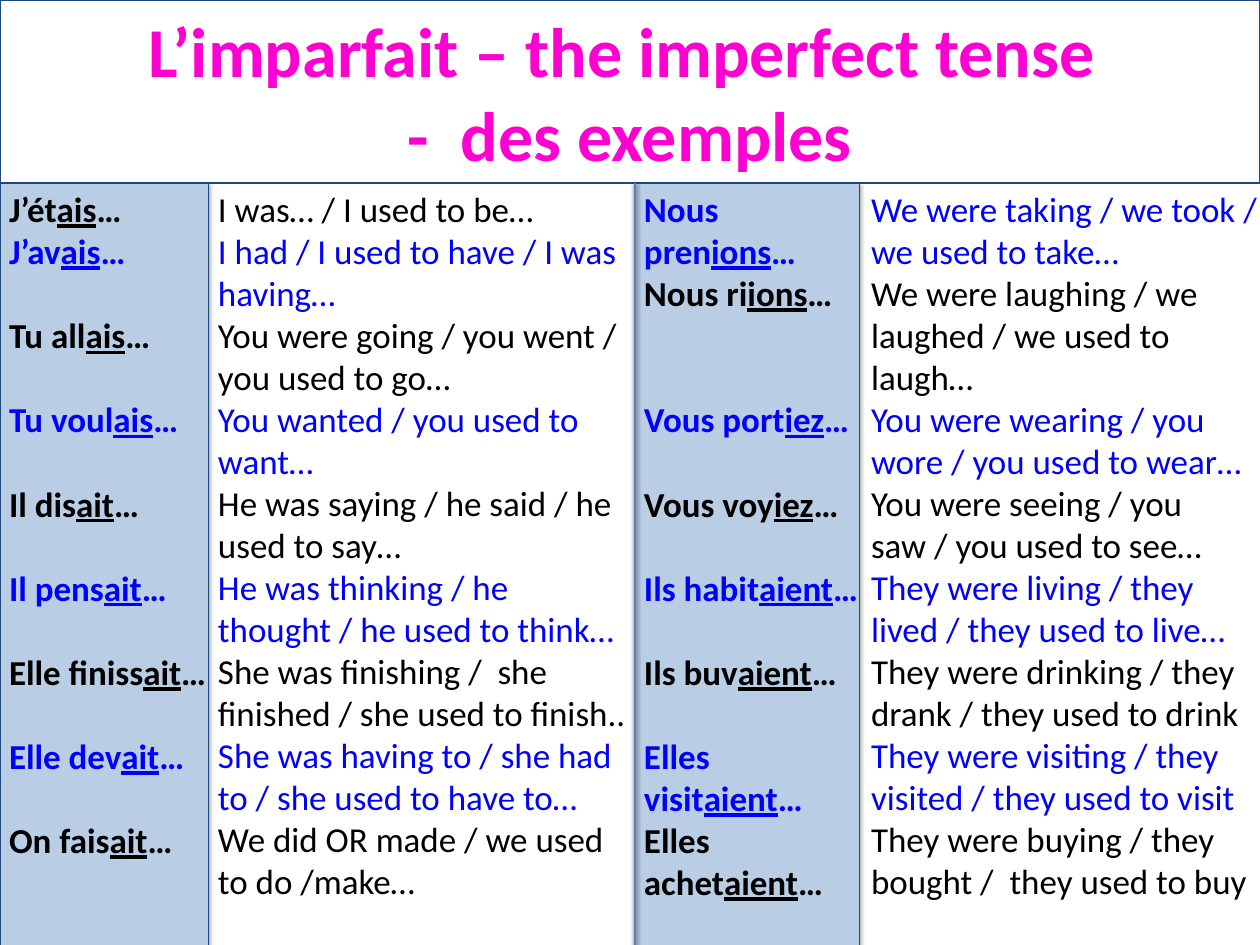
from dataclasses import dataclass

from lxml.etree import SubElement
from pptx import Presentation
from pptx.dml.color import RGBColor
from pptx.enum.shapes import MSO_CONNECTOR, MSO_SHAPE
from pptx.enum.text import MSO_ANCHOR, MSO_AUTO_SIZE, PP_ALIGN
from pptx.oxml.ns import qn
from pptx.util import Pt

SCALE = 10160
COLOURS = {
    "black": "000000",
    "blue": "0000FF",
    "title": "FF00D3",
    "panel": "B9CDE5",
    "border": "1F497D",
    "divider": "4F81BD",
}
FONT = "Calibri"
LINE_POINTS = 33.7
SLIDE_WIDTH, SLIDE_HEIGHT, HEADER_HEIGHT = 1260, 945, 183


@dataclass(frozen=True)
class Entry:
    stem: str
    ending: str = ""
    close: str = ""
    gap: int = 0


@dataclass(frozen=True)
class Column:
    left: int
    width: int
    height: int
    colours: tuple[str, str]
    bold: bool
    entries: list[Entry]


def verb(stem: str, ending: str, gap: int = 1) -> Entry:
    return Entry(stem, ending, "…", gap)


BLACK_FIRST = ("black", "blue")
BLUE_FIRST = ("blue", "black")
COLUMNS = [
    Column(0, 237, 772, BLACK_FIRST, True, [
        verb("J’ét", "ais", 0),
        verb("J’av", "ais"),
        verb("Tu all", "ais"),
        verb("Tu voul", "ais"),
        verb("Il dis", "ait"),
        verb("Il pens", "ait"),
        verb("Elle finiss", "ait"),
        verb("Elle dev", "ait"),
        verb("On fais", "ait", 0),
    ]),
    Column(209, 426, 815, BLACK_FIRST, False, [
        Entry("I was… / I used to be…"),
        Entry("I had / I used to have / I was having…"),
        Entry("You were going / you went / you used to go…"),
        Entry("You wanted / you used to want…"),
        Entry("He was saying / he said / he used to say…"),
        Entry("He was thinking / he thought / he used to think…"),
        Entry("She was finishing /  she finished / she used to finish.."),
        Entry("She was having to / she had to / she used to have to…"),
        Entry("We did OR made / we used to do /make…"),
    ]),
    Column(635, 241, 772, BLUE_FIRST, True, [
        verb("Nous pren", "ions", 0),
        verb("Nous ri", "ions", 2),
        verb("Vous port", "iez"),
        verb("Vous voy", "iez"),
        verb("Ils habit", "aient"),
        verb("Ils buv", "aient"),
        verb("Elles visit", "aient", 0),
        verb("Elles achet", "aient", 0),
    ]),
    Column(862, 406, 772, BLUE_FIRST, False, [
        Entry("We were taking / we took / we used to take…"),
        Entry("We were laughing / we laughed / we used to laugh…"),
        Entry("You were wearing / you wore / you used to wear…"),
        Entry("You were seeing / you saw / you used to see…"),
        Entry("They were living / they lived / they used to live…"),
        Entry("They were drinking / they drank / they used to drink"),
        Entry("They were visiting / they visited / they used to visit"),
        Entry("They were buying / they bought /  they used to buy"),
    ]),
]


def px(length: int) -> int:
    return length * SCALE


def rgb(name: str) -> RGBColor:
    return RGBColor.from_string(COLOURS[name])


def place(shape, left: int, top: int, width: int, height: int) -> None:
    shape.left, shape.top = px(left), px(top)
    shape.width, shape.height = px(width), px(height)


def set_line(shape, colour: str, points: float) -> None:
    shape.line.color.rgb = rgb(colour)
    shape.line.width = Pt(points)


def add_shadow(shape, distance: float, opacity: int) -> None:
    effects = SubElement(shape.element.spPr, qn("a:effectLst"))
    shadow = SubElement(effects, qn("a:outerShdw"), blurRad=str(Pt(3.1)),
                        dist=str(Pt(distance)), dir="5400000", rotWithShape="0")
    colour = SubElement(shadow, qn("a:srgbClr"), val=COLOURS["black"])
    SubElement(colour, qn("a:alpha"), val=str(opacity * 1000))


def set_font(paragraph, size: int, colour: str, bold: bool) -> None:
    for font in (paragraph.font, *(run.font for run in paragraph.runs)):
        font.name, font.size, font.bold = FONT, Pt(size), bold
        font.color.rgb = rgb(colour)


def add_panel(slide, left: int, width: int) -> None:
    panel = slide.shapes.add_shape(MSO_SHAPE.RECTANGLE, px(left), px(HEADER_HEIGHT),
                                   px(width), px(SLIDE_HEIGHT - HEADER_HEIGHT))
    panel.fill.solid()
    panel.fill.fore_color.rgb = rgb("panel")
    set_line(panel, "border", 0.75)
    add_shadow(panel, 1.8, 35)
    slide.shapes.title.element.addprevious(panel.element)


def fill_title(title) -> None:
    place(title, 0, 0, SLIDE_WIDTH, HEADER_HEIGHT)
    set_line(title, "border", 1)
    frame = title.text_frame
    frame.text = "L’imparfait – the imperfect tense \n-  des exemples"
    frame.auto_size, frame.word_wrap = MSO_AUTO_SIZE.NONE, True
    frame.vertical_anchor = MSO_ANCHOR.MIDDLE
    frame.margin_left = frame.margin_right = px(13)
    frame.margin_top = frame.margin_bottom = px(6)
    for paragraph in frame.paragraphs:
        paragraph.alignment = PP_ALIGN.CENTER
        set_font(paragraph, 56, "title", True)


def fill_column(body, column: Column) -> None:
    place(body, column.left, HEADER_HEIGHT, column.width, column.height)
    frame = body.text_frame
    frame.auto_size, frame.word_wrap = MSO_AUTO_SIZE.NONE, True
    frame.vertical_anchor = MSO_ANCHOR.TOP
    for index, entry in enumerate(column.entries):
        paragraph = frame.add_paragraph() if index else frame.paragraphs[0]
        for text in filter(None, (entry.stem, entry.ending, entry.close)):
            run = paragraph.add_run()
            run.text = text
            run.font.underline = text == entry.ending
        paragraph.space_before = Pt(0)
        paragraph.space_after = Pt(entry.gap * LINE_POINTS)
        properties = paragraph._p.get_or_add_pPr()
        properties.set("marL", "0")
        properties.set("indent", "0")
        SubElement(properties, qn("a:buNone"))
        set_font(paragraph, 28, column.colours[index % 2], column.bold)


def add_divider(slide) -> None:
    divider = slide.shapes.add_connector(MSO_CONNECTOR.STRAIGHT, px(635),
                                         px(HEADER_HEIGHT), px(635), px(SLIDE_HEIGHT))
    set_line(divider, "divider", 2)
    add_shadow(divider, 1.6, 38)


def main() -> None:
    """Build the slide of imperfect tense examples."""
    presentation = Presentation()
    presentation.slide_width, presentation.slide_height = px(SLIDE_WIDTH), px(SLIDE_HEIGHT)
    slide = presentation.slides.add_slide(presentation.slide_layouts.get_by_name("Comparison"))
    fill_title(slide.shapes.title)
    bodies = [shape for shape in slide.placeholders if shape.placeholder_format.idx]
    for body, column in zip(bodies, COLUMNS):
        fill_column(body, column)
    add_panel(slide, 635, 225)
    add_panel(slide, 0, 209)
    add_divider(slide)
    presentation.save("out.pptx")


if __name__ == "__main__":
    main()
